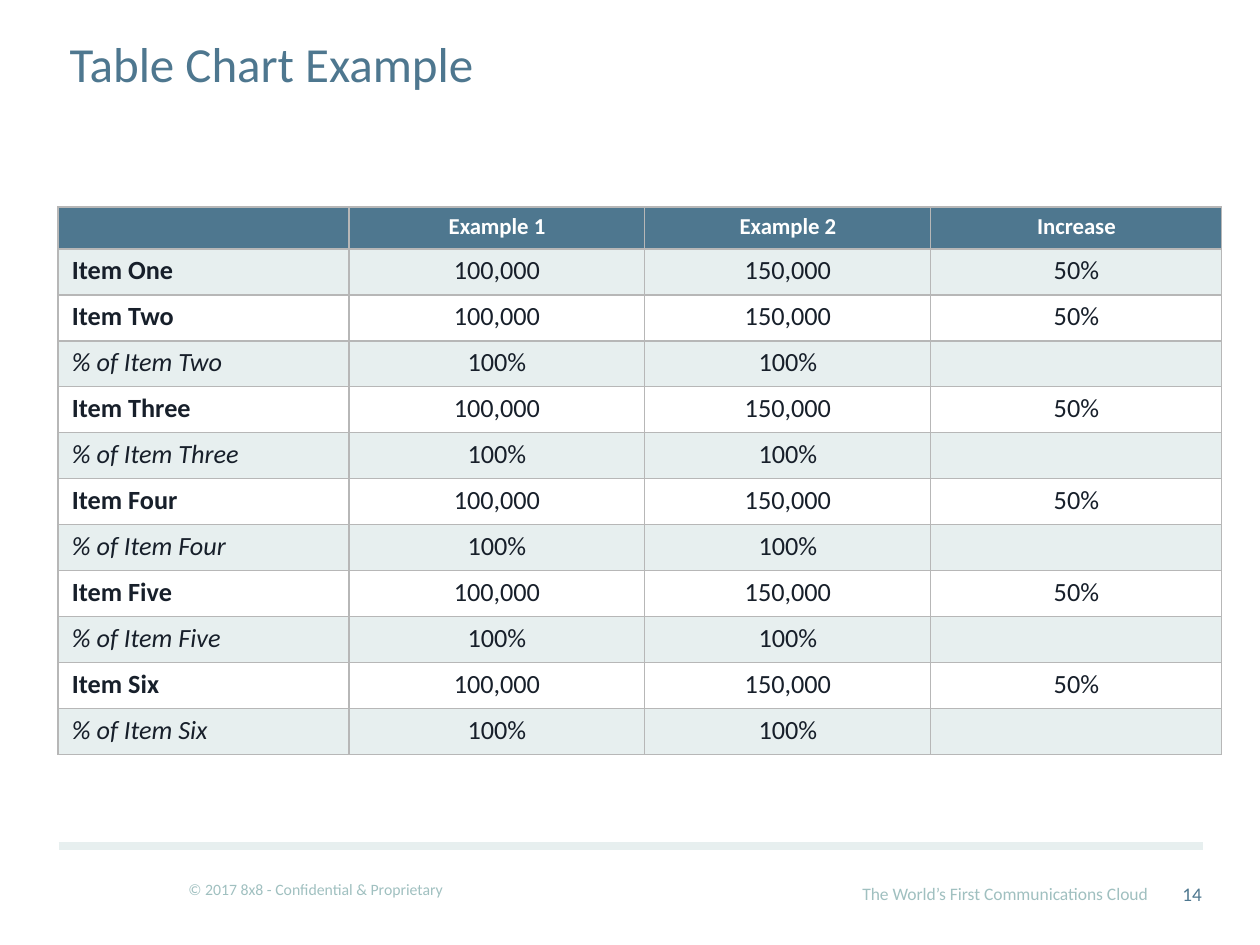
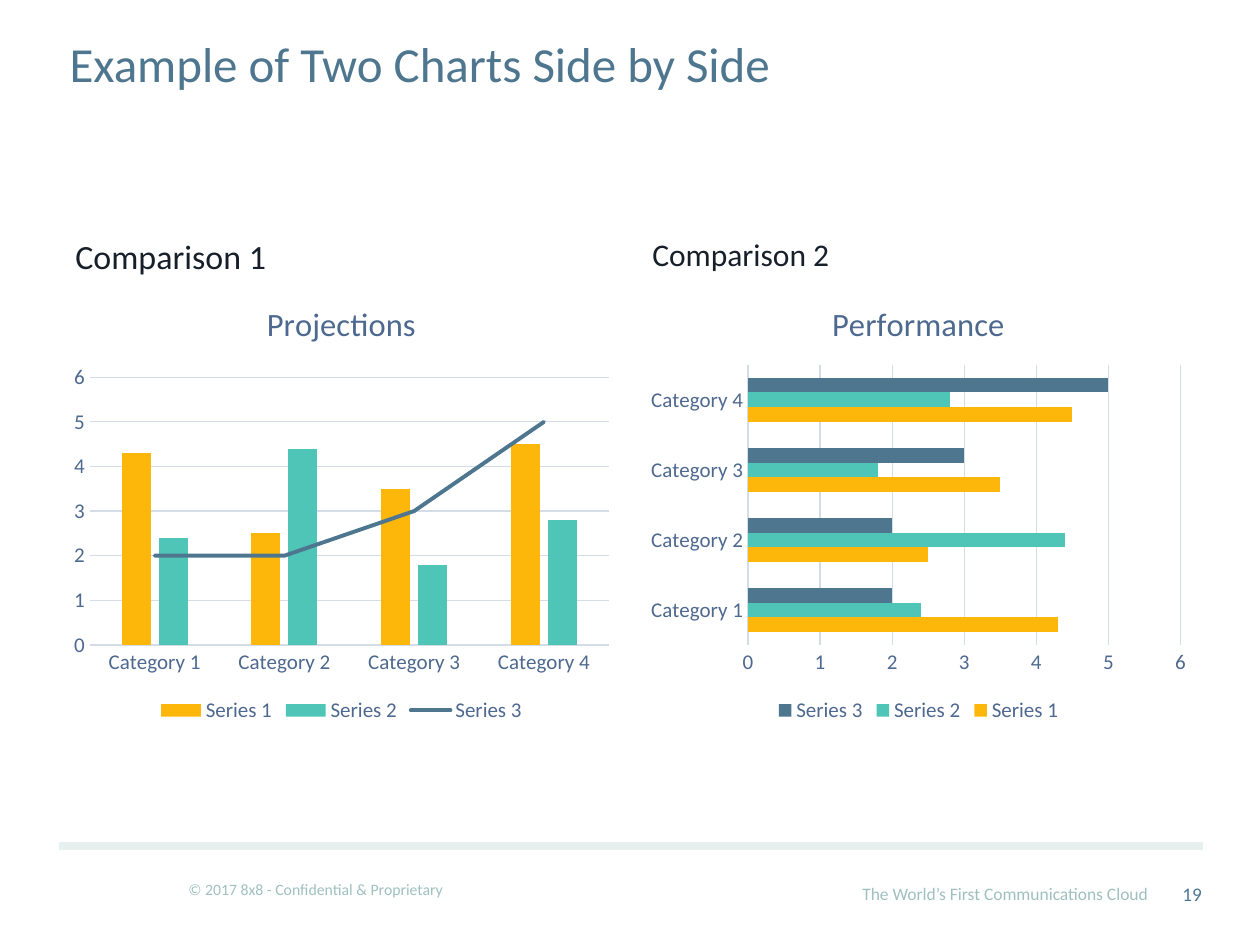
from lxml import etree
from pptx import Presentation
from pptx import util as u
from pptx.chart import data as cd
from pptx.dml.color import RGBColor
from pptx.enum import chart as ec, shapes, text as et
from pptx.oxml import parse_xml
from pptx.oxml import ns

PX = 914400 / 126
FONT = "Calibri"
COLORS = {
    "blue": "4E778F", "pale": "E7EFEF", "sage": "A0C0C0", "ink": "171F2A",
    "white": "FFFFFF", "border": "B7B7B7", "label": "4E698F", "grid": "D4DCE7",
    "amber": "FDB70B", "teal": "4EC5B7",
}
CATEGORIES = [f"Category {n}" for n in range(1, 5)]
SERIES = [
    ("Series 1", (4.3, 2.5, 3.5, 4.5), "amber"),
    ("Series 2", (2.4, 4.4, 1.8, 2.8), "teal"),
    ("Series 3", (2, 2, 3, 5), "blue"),
]
LEFT, CENTER, RIGHT = et.PP_ALIGN.LEFT, et.PP_ALIGN.CENTER, et.PP_ALIGN.RIGHT


def px(n):
    return u.Emu(round(n * PX))


def rgb(name):
    return RGBColor.from_string(COLORS[name])


def style_font(font, size, color, bold=False, italic=False):
    font.name = FONT
    font.size = u.Pt(size)
    font.bold = bold
    font.italic = italic
    font.color.rgb = rgb(color)


def write(tf, text, size=18, color="ink", bold=False, italic=False, align=LEFT):
    p = tf.paragraphs[0]
    p.alignment = align
    if text:
        r = p.add_run()
        r.text = text
        style_font(r.font, size, color, bold, italic)
    else:
        p._p.get_or_add_endParaRPr().set("sz", str(size * 100))


def add_text(s, box, text, wrap=True, anchor=et.MSO_ANCHOR.TOP, insets=None, **fmt):
    tf = s.shapes.add_textbox(*map(px, box)).text_frame
    tf.word_wrap = wrap
    tf.vertical_anchor = anchor
    if insets:
        x, y = map(px, insets)
        tf.margin_left = tf.margin_right = x
        tf.margin_top = tf.margin_bottom = y
    write(tf, text, **fmt)


def add_rule(s, x1, x2, y):
    rule = s.shapes.add_connector(
        shapes.MSO_CONNECTOR.STRAIGHT, px(x1), px(y), px(x2), px(y))
    rule.line.color.rgb = rgb("pale")
    rule.line.width = u.Pt(4.5)
    etree.SubElement(rule._element.spPr, ns.qn("a:effectLst"))


def add_slide(prs, title, number):
    s = prs.slides.add_slide(prs.slide_layouts[5])
    sp = s.shapes.title
    sp.left, sp.top, sp.width, sp.height = map(px, (57, 0, 1134, 125))
    tf = sp.text_frame
    tf.auto_size = et.MSO_AUTO_SIZE.NONE
    tf.vertical_anchor = et.MSO_ANCHOR.MIDDLE
    write(tf, title, size=28, color="blue")
    add_text(s, (176, 874, 284, 32), "© 2017 8x8 - Confidential & Proprietary",
             wrap=False, size=9, color="sage")
    add_rule(s, 59, 1203, 846)
    add_text(s, (1167, 872, 44, 38), str(number), anchor=et.MSO_ANCHOR.BOTTOM,
             insets=(9, 5), size=11, color="blue", align=RIGHT)
    add_text(s, (850, 877, 318, 34), "The World’s First Communications Cloud",
             wrap=False, size=10, color="sage")
    return s


def border_cell(cell):
    tcPr = cell._tc.get_or_add_tcPr()
    for side in "LRTB":
        tcPr.append(parse_xml(
            f'<a:ln{side} {ns.nsdecls("a")} w="9525"><a:solidFill>'
            f'<a:srgbClr val="{COLORS["border"]}"/></a:solidFill></a:ln{side}>'))


def fill_cell(cell, text, fill, **fmt):
    border_cell(cell)
    cell.fill.solid()
    cell.fill.fore_color.rgb = rgb(fill)
    cell.margin_left = cell.margin_right = px(14)
    cell.margin_top = cell.margin_bottom = px(6)
    write(cell.text_frame, text, **fmt)


def add_comparison_table(s, x, y, widths, header_height, row_height, rows):
    height = header_height + row_height * (len(rows) - 1)
    frame = s.shapes.add_table(len(rows), len(widths), px(x), px(y),
                               px(sum(widths)), px(height))
    table = frame.table
    table.horz_banding = False
    for column, width in zip(table.columns, widths):
        column.width = px(width)
    for i, values in enumerate(rows):
        table.rows[i].height = px(row_height if i else header_height)
        share = values[0].startswith("%")
        for j, value in enumerate(values):
            align = CENTER if j else LEFT
            if i == 0:
                fill_cell(table.cell(i, j), value, "blue", size=13,
                          color="white", bold=True, align=align)
            else:
                fill_cell(table.cell(i, j), value, "pale" if i % 2 else "white",
                          size=15, bold=j == 0 and not share,
                          italic=j == 0 and share, align=align)


def style_axis(axis):
    axis.major_tick_mark = axis.minor_tick_mark = ec.XL_TICK_MARK.NONE
    style_font(axis.tick_labels.font, 12, "label")


def style_line(line, color):
    line.color.rgb = rgb(color)
    line.width = u.Pt(0.75)


def add_chart(s, kind, box, title, gap, overlap):
    data = cd.CategoryChartData()
    data.categories = CATEGORIES
    for name, values, _ in SERIES:
        data.add_series(name, values)
    chart = s.shapes.add_chart(kind, *map(px, box), data).chart
    style_font(chart.font, 10, "ink")
    chart.has_title = True
    write(chart.chart_title.text_frame, title, size=18.6, color="label", align=CENTER)
    chart.chart_title.include_in_layout = False
    chart.has_legend = True
    chart.legend.position = ec.XL_LEGEND_POSITION.BOTTOM
    chart.legend.include_in_layout = False
    style_font(chart.legend.font, 12, "label")

    style_axis(chart.category_axis)
    style_line(chart.category_axis.format.line, "grid")
    values = chart.value_axis
    style_axis(values)
    values.format.line.fill.background()
    values.minimum_scale, values.maximum_scale, values.major_unit = 0, 6, 1
    values.has_major_gridlines = True
    style_line(values.major_gridlines.format.line, "grid")

    plot = chart.plots[0]
    plot.vary_by_categories = False
    plot.gap_width, plot.overlap = gap, overlap
    for series, (_, _, color) in zip(plot.series, SERIES):
        series.invert_if_negative = False
        series.format.fill.solid()
        series.format.fill.fore_color.rgb = rgb(color)
    return chart


def turn_last_series_into_line(chart):
    bars = chart.plots[0]._element
    ser = bars.findall(ns.qn("c:ser"))[-1]
    ser.remove(ser.find(ns.qn("c:invertIfNegative")))
    lines = parse_xml(
        f'<c:lineChart {ns.nsdecls("c")}><c:grouping val="standard"/>'
        '<c:varyColors val="0"/><c:marker val="1"/></c:lineChart>')
    lines.insert(2, ser)
    for axis in bars.findall(ns.qn("c:axId")):
        etree.SubElement(lines, axis.tag, val=axis.get("val"))
    bars.addnext(lines)
    series = chart.plots[1].series[0]
    series.smooth = False
    series.marker.style = ec.XL_MARKER_STYLE.NONE
    series.format.fill.background()
    series.format.line.color.rgb = rgb(SERIES[-1][2])
    series.format.line.width = u.Pt(2.25)
    series.format.line._get_or_add_ln().set("cap", "rnd")


def table_rows():
    rows = [("", "Example 1", "Example 2", "Increase")]
    for name in ("One", "Two", "Three", "Four", "Five", "Six"):
        rows.append((f"Item {name}", "100,000", "150,000", "50%"))
        if name != "One":
            rows.append((f"% of Item {name}", "100%", "100%", ""))
    return rows


def main():
    prs = Presentation()
    prs.slide_width, prs.slide_height = px(1260), px(945)

    s = add_slide(prs, "Table Chart Example", 14)
    add_comparison_table(s, 58, 207, (291, 296, 286, 291), 42, 46, table_rows())

    s = add_slide(prs, "Example of Two Charts Side by Side", 19)
    kinds = ec.XL_CHART_TYPE
    panels = [
        (63, "Comparison 1", 19.4, kinds.COLUMN_CLUSTERED, "Projections", 219, -27),
        (640, "Comparison 2", 18, kinds.BAR_CLUSTERED, "Performance", 182, 0),
    ]
    charts = []
    for x, heading, size, kind, title, gap, overlap in panels:
        add_text(s, (x, 229, 557, 49), heading, size=size)
        charts.append(add_chart(s, kind, (x, 280, 557, 448), title, gap, overlap))
    turn_last_series_into_line(charts[0])

    prs.save("out.pptx")


if __name__ == "__main__":
    main()
